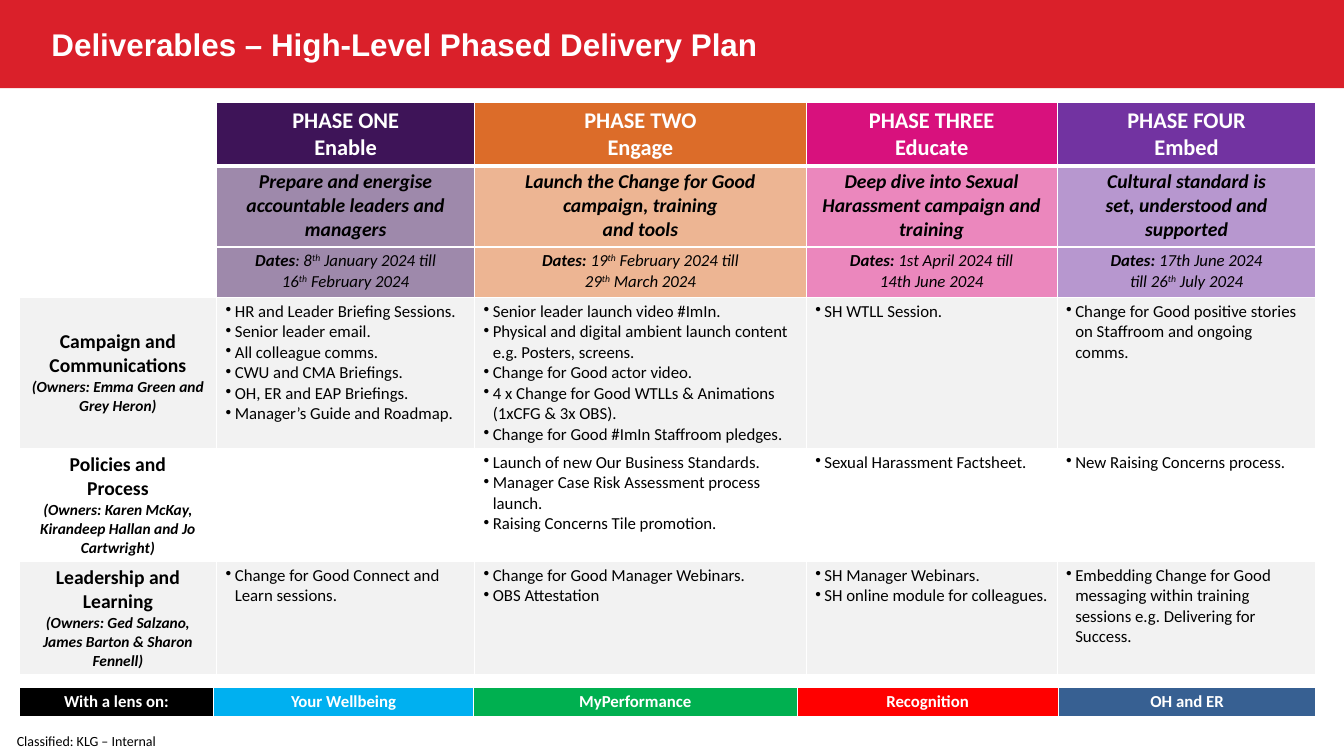
from dataclasses import dataclass

from lxml import etree
from pptx import Presentation
from pptx import util as u
from pptx.dml.color import RGBColor
from pptx.enum import shapes, text
from pptx.oxml import ns


@dataclass(frozen=True)
class Style:
    size: float
    color: str = "000000"
    bold: bool = False
    italic: bool = False
    bullet: bool = False
    font: str = "Calibri"


class Theme:
    # Colours
    red, white, grey = "DA202A", "FFFFFF", "F2F2F2"
    phases = ("3E1458", "DC6C29", "D8117D", "7233A1")
    tints = ("3E1458", "DC6C29", "D8117D", "7030A0")
    lenses = ("000000", "00B0F0", "00B050", "FF0000", "376092")
    # Type
    title = Style(22.4, white, bold=True, font="Arial")
    phase = Style(16, white, bold=True)
    aim = Style(14, bold=True, italic=True)
    dates = Style(12, italic=True)
    stream = Style(14, bold=True)
    owners = Style(11, bold=True, italic=True)
    item = Style(12, bullet=True)
    lens = Style(12, white, bold=True)
    footer = Style(10)


class Board:
    """One slide; positions and sizes are percentages of its width and height."""

    def __init__(self, prs, theme):
        self.prs, self.theme = prs, theme
        self.s = prs.slides.add_slide(prs.slide_layouts[5])

    def box(self, x, y, w, h):
        width, height = self.prs.slide_width, self.prs.slide_height
        return [round(v * side / 100) for v, side in
                ((x, width), (y, height), (w, width), (h, height))]

    def font(self, r, style):
        f = r.font
        f.name, f.size = style.font, u.Pt(style.size)
        f.bold, f.italic = style.bold, style.italic
        f.color.rgb = RGBColor.from_string(style.color)

    def frame(self, tf, wrap):
        tf.margin_left = tf.margin_right = tf.margin_top = tf.margin_bottom = 0
        tf.word_wrap = wrap
        tf.vertical_anchor = text.MSO_ANCHOR.MIDDLE

    def banner(self, *area):
        sp = self.s.shapes.add_shape(shapes.MSO_SHAPE.RECTANGLE, *self.box(*area))
        sp.shadow.inherit = False
        sp.fill.solid()
        sp.fill.fore_color.rgb = RGBColor.from_string(self.theme.red)
        sp.line.fill.background()
        self.s.shapes.title.element.addprevious(sp.element)

    def title(self, words, *area):
        sp = self.s.shapes.title
        sp.left, sp.top, sp.width, sp.height = self.box(*area)
        tf = sp.text_frame
        tf.text = words
        self.frame(tf, True)
        tf.paragraphs[0].alignment = text.PP_ALIGN.LEFT
        self.font(tf.paragraphs[0].runs[0], self.theme.title)

    def label(self, words, style, *area):
        tf = self.s.shapes.add_textbox(*self.box(*area)).text_frame
        tf.text = words
        self.frame(tf, False)
        self.font(tf.paragraphs[0].runs[0], style)

    def table(self, cols, rows, *area):
        """Columns and rows share the area in proportion to their weights."""
        x, y, w, h = self.box(*area)
        tbl = self.s.shapes.add_table(len(rows), len(cols), x, y, w, h).table
        tbl.first_row = tbl.horz_banding = False
        for col, weight in zip(tbl.columns, cols):
            col.width = round(w * weight / sum(cols))
        for row, weight in zip(tbl.rows, rows):
            row.height = round(h * weight / sum(rows))
        return tbl

    def cell(self, cell, fill, parts=(), bottom=1, alpha=None, middle=False):
        """Fill a cell; parts are (lines, style), and | splits a line into runs."""
        cell.margin_left = cell.margin_right = u.Inches(0.09)
        cell.margin_top = cell.margin_bottom = u.Inches(0.04)
        cell.vertical_anchor = text.MSO_ANCHOR.MIDDLE if middle else text.MSO_ANCHOR.TOP
        self.borders(cell, bottom)
        cell.fill.solid()
        cell.fill.fore_color.rgb = RGBColor.from_string(fill)
        if alpha:
            clr = cell._tc.tcPr.find(ns.qn("a:solidFill"))[0]
            etree.SubElement(clr, ns.qn("a:alpha"), val=str(alpha * 1000))
        tf = cell.text_frame
        lines = [(line, style) for block, style in parts for line in block.split("\n")]
        for i, (line, style) in enumerate(lines):
            p = tf.add_paragraph() if i else tf.paragraphs[0]
            if style.bullet:
                self.bullet(p)
            else:
                p.alignment = text.PP_ALIGN.CENTER
            for part in line.split("|"):
                r = p.add_run()
                r.text = part
                self.font(r, style)
                if part.startswith("Dates"):
                    r.font.bold = True
                elif part == "th":
                    r.font._element.set("baseline", "30000")

    def borders(self, cell, bottom):
        tcPr = cell._tc.get_or_add_tcPr()
        for side, pts in zip("LRTB", (1, 1, 1, bottom)):
            ln = etree.SubElement(tcPr, ns.qn(f"a:ln{side}"), w=str(u.Pt(pts)))
            solid = etree.SubElement(ln, ns.qn("a:solidFill"))
            etree.SubElement(solid, ns.qn("a:srgbClr"), val=self.theme.white)

    def bullet(self, p):
        pPr = p._p.get_or_add_pPr()
        indent = u.Inches(0.09)
        pPr.set("marL", str(indent))
        pPr.set("indent", str(-indent))
        etree.SubElement(pPr, ns.qn("a:buChar"), char="•")


PHASES = ("PHASE ONE\nEnable", "PHASE TWO\nEngage",
          "PHASE THREE\nEducate", "PHASE FOUR\nEmbed")
AIMS = ("Prepare and energise\naccountable leaders and managers",
        "Launch the Change for Good campaign, training\nand tools",
        "Deep dive into Sexual Harassment campaign and training",
        "Cultural standard is\nset, understood and supported")
DATES = ("Dates|: 8|th| January 2024 till\n16|th| February 2024",
         "Dates: |19|th| February 2024 till\n29|th| March 2024",
         "Dates: |1st April 2024 till\n14th June 2024",
         "Dates: |17th June 2024\ntill 26|th| July 2024")
# Work stream, owners, then the deliverables of each phase
STREAMS = (
    ("Campaign and Communications", "(Owners: Emma Green and\nGrey Heron)",
     "HR and Leader Briefing Sessions.\nSenior leader email.\nAll colleague comms.\n"
     "CWU and CMA Briefings.\nOH, ER and EAP Briefings.\nManager’s Guide and Roadmap.",
     "Senior leader launch video #ImIn.\n"
     "Physical and digital ambient launch content e.g. Posters, screens.\n"
     "Change for Good actor video.\n"
     "4 x Change for Good WTLLs & Animations (1xCFG & 3x OBS).\n"
     "Change for Good #ImIn Staffroom pledges.",
     "SH WTLL Session.",
     "Change for Good positive stories on Staffroom and ongoing comms."),
    ("Policies and\nProcess", "(Owners: Karen McKay, Kirandeep Hallan and Jo Cartwright)",
     "",
     "Launch of new Our Business Standards.\n"
     "Manager Case Risk Assessment process launch.\nRaising Concerns Tile promotion.",
     "Sexual Harassment Factsheet.",
     "New Raising Concerns process."),
    ("Leadership and\nLearning", "(Owners: Ged Salzano, James Barton & Sharon Fennell)",
     "Change for Good Connect and Learn sessions.",
     "Change for Good Manager Webinars.\nOBS Attestation",
     "SH Manager Webinars.\nSH online module for colleagues.",
     "Embedding Change for Good messaging within training sessions "
     "e.g. Delivering for Success."),
)
LENSES = ("With a lens on:", "Your Wellbeing", "MyPerformance", "Recognition", "OH and ER")


def main():
    prs = Presentation()
    prs.slide_width, prs.slide_height = u.Inches(13.33), u.Inches(7.5)
    t = Theme()
    board = Board(prs, t)

    # Banner, title and classification
    board.banner(0, 0, 100, 11.67)
    board.title("Deliverables – High-Level Phased Delivery Plan", 3.83, 3.33, 70.67, 5.07)
    board.label("Classified: KLG – Internal", t.footer, 1.25, 96.13, 12, 3.87)

    # Phase headings
    plan = board.table((1.96, 2.56, 3.29, 2.49, 2.57), (0.63, 0.8, 0.5, 1.5, 1.12, 1.12),
                       1.43, 13.6, 96.5, 75.6)
    headings = ((PHASES, t.phase, t.phases, 3, None),
                (AIMS, t.aim, t.tints, 1, 50),
                (DATES, t.dates, t.tints, 1, 50))
    for row, (words, style, fills, bottom, alpha) in enumerate(headings):
        board.cell(plan.cell(row, 0), t.white, bottom=bottom)
        for col, (block, fill) in enumerate(zip(words, fills), 1):
            board.cell(plan.cell(row, col), fill, [(block, style)], bottom, alpha)

    # Work streams, on alternating bands
    for row, (stream, owners, *items) in enumerate(STREAMS, len(headings)):
        band = t.grey if row % 2 else t.white
        board.cell(plan.cell(row, 0), band, [(stream, t.stream), (owners, t.owners)],
                   middle=True)
        for col, block in enumerate(items, 1):
            board.cell(plan.cell(row, col), band, [(block, t.item)] if block else ())

    # Lens strip
    strip = board.table((1.93, 2.58, 3.21, 2.59, 2.56), (1,), 1.43, 90.93, 96.5, 4)
    for col, (lens, fill) in enumerate(zip(LENSES, t.lenses)):
        board.cell(strip.cell(0, col), fill, [(lens, t.lens)], bottom=3)

    prs.save("out.pptx")


if __name__ == "__main__":
    main()
